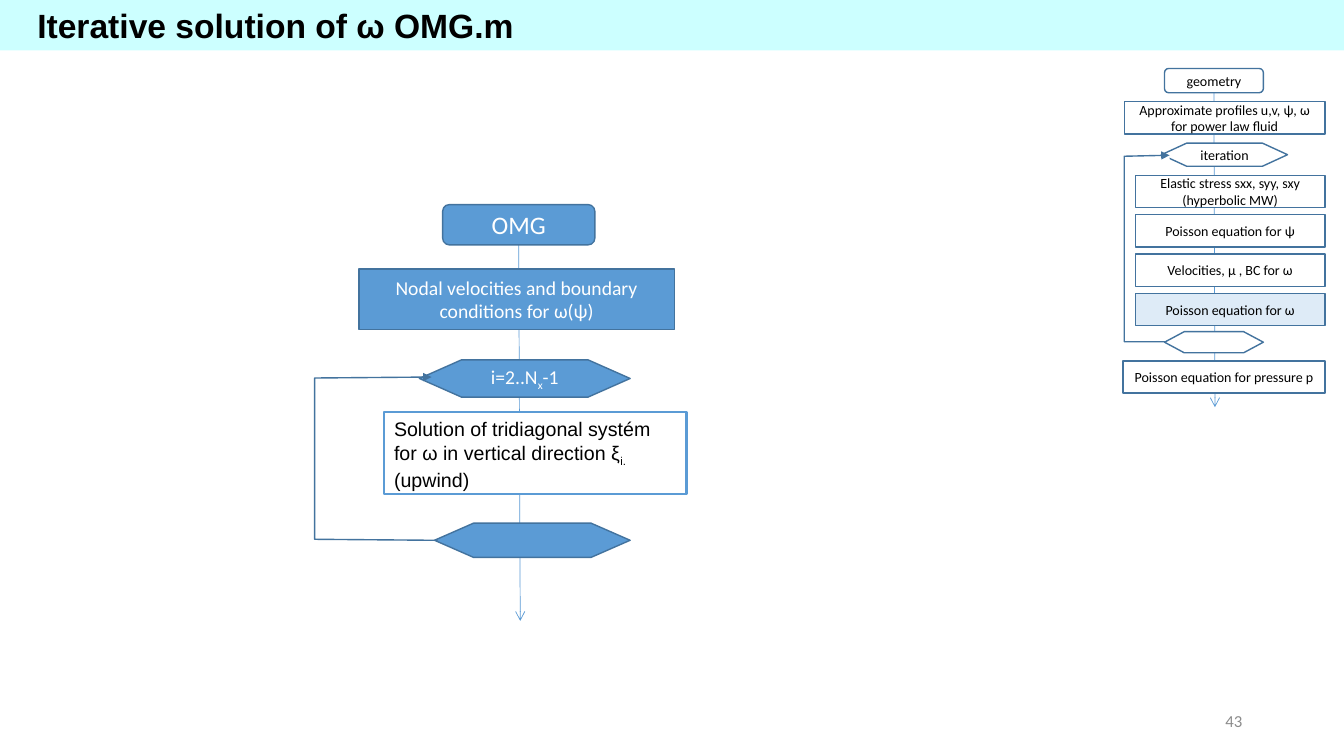
from pptx import Presentation
from pptx.dml.color import RGBColor
from pptx.enum import shapes, text
from pptx.oxml import parse_xml
from pptx.oxml.ns import nsdecls
from pptx.util import Inches, Pt

ROUND = shapes.MSO_SHAPE.FLOWCHART_ALTERNATE_PROCESS
PROCESS = shapes.MSO_SHAPE.FLOWCHART_PROCESS
HEXAGON = shapes.MSO_SHAPE.FLOWCHART_PREPARATION
RECT = shapes.MSO_SHAPE.RECTANGLE
BLUE, DARK, WHITE, BLACK = "5B9BD5", "43739E", "FFFFFF", "000000"
CENTER, LEFT, RIGHT = text.PP_ALIGN.CENTER, text.PP_ALIGN.LEFT, text.PP_ALIGN.RIGHT
MIDDLE, TOP = text.MSO_ANCHOR.MIDDLE, text.MSO_ANCHOR.TOP


def rgb(value):
    return RGBColor.from_string(value)


class FlowSlide:
    """Draws flowchart elements on one slide in a shared style."""

    def __init__(self, slide):
        self.shapes = slide.shapes

    def paint(self, s, fill, line, width=1):
        s.shadow.inherit = False
        if fill:
            s.fill.solid()
            s.fill.fore_color.rgb = rgb(fill)
        else:
            s.fill.background()
        if line:
            s.line.color.rgb = rgb(line)
            s.line.width = Pt(width)
        else:
            s.line.fill.background()

    def set_words(self, s, words, size, color, font="Calibri", align=CENTER,
                  anchor=MIDDLE, bold=False):
        tf = s.text_frame
        tf.word_wrap = True
        tf.vertical_anchor = anchor
        p = tf.paragraphs[0]
        p.alignment = align
        for i, piece in enumerate(words.split("|")):
            r = p.add_run()
            r.text = piece
            r.font.name, r.font.size, r.font.bold = font, Pt(size), bold
            r.font.color.rgb = rgb(color)
            if i % 2:
                r.font._element.set("baseline", "-25000")

    def box(self, kind, at, words="", size=10, color=BLACK, fill=WHITE,
            line=DARK, width=1, **style):
        s = self.shapes.add_shape(kind, *map(Inches, at))
        self.paint(s, fill, line, width)
        if words:
            self.set_words(s, words, size, color, **style)
        return s

    def label(self, at, words, size, color, **style):
        s = self.shapes.add_textbox(*map(Inches, at))
        self.set_words(s, words, size, color, **style)

    def arrowhead(self, s, kind):
        s.line._get_or_add_ln().append(
            parse_xml(f'<a:tailEnd {nsdecls("a")} type="{kind}"/>'))

    def flow(self, start, end):
        c = self.shapes.add_connector(
            shapes.MSO_CONNECTOR.STRAIGHT, *map(Inches, start + end))
        c.line.color.rgb = rgb(BLUE)
        c.line.width = Pt(0.5)
        self.arrowhead(c, "arrow")
        c._element.spPr.append(parse_xml(f'<a:effectLst {nsdecls("a")}/>'))
        return c

    def loop(self, points, fill=None):
        start, *rest = [tuple(map(Inches, point)) for point in points]
        builder = self.shapes.build_freeform(*start)
        builder.add_line_segments(rest, close=False)
        s = builder.convert_to_shape()
        self.paint(s, fill, DARK)
        self.arrowhead(s, "triangle")


def draw_solver(fs):
    flow = fs.flow((5.13, 2.42), (5.16, 6.16))
    title = fs.box(RECT, (0, 0, 13.33, 0.5), "Iterative solution of ω OMG.m", 24,
                   fill="CCFFFF", line=None, font="Arial", align=LEFT,
                   anchor=TOP, bold=True)
    title.text_frame.margin_left = Inches(0.37)
    steps = [
        (ROUND, (4.39, 2.03, 1.51, 0.4), "OMG", 18),
        (PROCESS, (3.56, 2.67, 3.13, 0.6),
         "Nodal velocities and boundary conditions for ω(ψ)", 14),
        (HEXAGON, (4.16, 3.57, 2.09, 0.37), "i=2..N|x|-1", 14),
        (HEXAGON, (4.31, 5.19, 1.94, 0.34), "", 14),
    ]
    start, *_ = [fs.box(*step, color=WHITE, fill=BLUE) for step in steps]
    flow.begin_connect(start, 2)
    fs.loop([(4.34, 5.36), (3.12, 5.35), (3.12, 3.75), (4.28, 3.74)])
    fs.box(RECT, (3.81, 4.09, 3, 0.81),
           "Solution of tridiagonal systém for ω in vertical direction ξ|i. |(upwind)",
           14, line=BLUE, width=1.5, font="Arial", align=LEFT, anchor=TOP)
    fs.label((9.42, 6.95, 3, 0.4), "43", 12, "8C8C8C", align=RIGHT)


def draw_overview(fs):
    flow = fs.flow((12.04, 0.92), (12.05, 4.04))
    start = fs.box(ROUND, (11.55, 0.68, 0.98, 0.24), "geometry")
    fs.box(PROCESS, (11.15, 1.01, 1.99, 0.32),
           "Approximate profiles u,v, ψ, ω for power law fluid")
    fs.box(HEXAGON, (11.52, 1.42, 1.25, 0.23), "iteration")
    fs.loop([(11.63, 3.39), (11.15, 3.39), (11.15, 1.55), (11.6, 1.54)], WHITE)
    steps = [
        ("Elastic stress sxx, syy, sxy (hyperbolic MW)", WHITE),
        ("Poisson equation for ψ", WHITE),
        ("Velocities, µ , BC for ω", WHITE),
        ("Poisson equation for ω", "DEEBF7"),
    ]
    for i, (words, fill) in enumerate(steps):
        fs.box(PROCESS, (11.26, 1.74 + 0.39 * i, 1.88, 0.32), words, fill=fill)
    fs.box(PROCESS, (11.14, 3.58, 2, 0.32), "Poisson equation for pressure p")
    fs.box(HEXAGON, (11.55, 3.29, 0.98, 0.21))
    flow.begin_connect(start, 2)


def main():
    prs = Presentation()
    prs.slide_width, prs.slide_height = Inches(13.33), Inches(7.5)
    fs = FlowSlide(prs.slides.add_slide(prs.slide_layouts[6]))
    draw_solver(fs)
    draw_overview(fs)
    prs.save("out.pptx")


if __name__ == "__main__":
    main()
